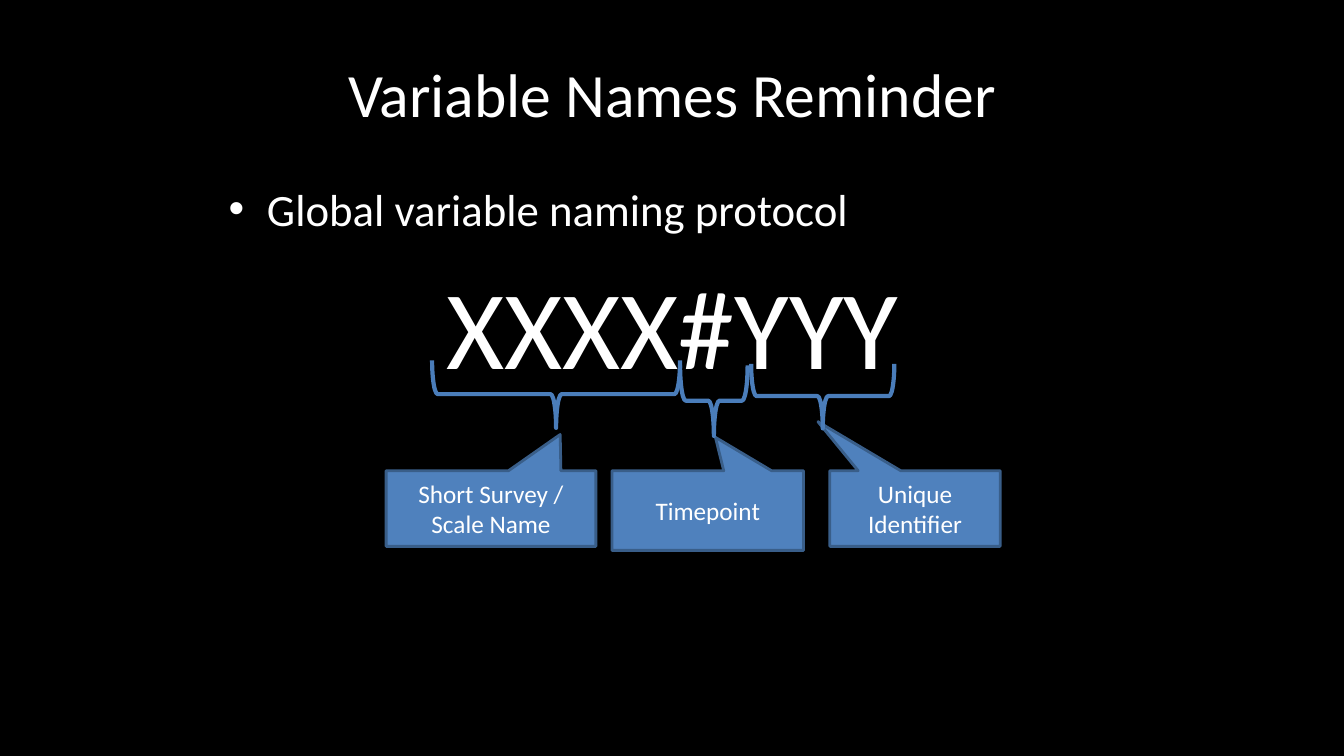
from lxml import etree
from pptx import Presentation
from pptx.dml.color import RGBColor
from pptx.enum.shapes import MSO_SHAPE as SHAPE
from pptx.enum.text import MSO_ANCHOR as ANCHOR, PP_ALIGN as ALIGN
from pptx.oxml.ns import qn
from pptx.util import Inches, Pt


def rgb(value):
    return RGBColor.from_string(value)


class Deck:
    FONT, TEXT, BACK = "Calibri", "FFFFFF", "000000"
    FILL, EDGE, BRACE = "4F81BD", "395E89", "4A7DBA"

    def __init__(self):
        self.prs = Presentation()
        self.prs.slide_width, self.prs.slide_height = Inches(13.33), Inches(7.5)
        self.s = self.prs.slides.add_slide(self.prs.slide_layouts[5])
        fill = self.s.background.fill
        fill.solid()
        fill.fore_color.rgb = rgb(self.BACK)

    def add_text(self, p, text, size, align=ALIGN.CENTER):
        p.alignment = align
        r = p.add_run()
        r.text = text
        r.font.name, r.font.size = self.FONT, Pt(size)
        r.font.color.rgb = rgb(self.TEXT)

    def indent(self, p, left, first, bullet=None):
        pPr = p._p.get_or_add_pPr()
        pPr.set("marL", str(Inches(left)))
        pPr.set("indent", str(Inches(first)))
        if bullet:
            etree.SubElement(pPr, qn("a:buFont")).set("typeface", "Arial")
            etree.SubElement(pPr, qn("a:buChar")).set("char", bullet)
        else:
            etree.SubElement(pPr, qn("a:buNone"))

    def title(self, text, box):
        sp = self.s.shapes.title
        sp.left, sp.top, sp.width, sp.height = map(Inches, box)
        tf = sp.text_frame
        tf.vertical_anchor = ANCHOR.MIDDLE
        self.add_text(tf.paragraphs[0], text, 44)

    def body(self, bullet, pattern, box):
        tf = self.s.shapes.add_textbox(*map(Inches, box)).text_frame
        tf.word_wrap = True
        p = tf.paragraphs[0]
        self.add_text(p, bullet, 32, ALIGN.LEFT)
        self.indent(p, 0.38, -0.38, "•")
        p = tf.add_paragraph()
        self.add_text(p, pattern, 80)
        p.space_before = Pt(16)
        self.indent(p, 0, -0.56)

    def shape(self, kind, box, line, width, adjust):
        sp = self.s.shapes.add_shape(kind, *map(Inches, box))
        sp.shadow.inherit = False
        sp.line.color.rgb, sp.line.width = rgb(line), Pt(width)
        for i, value in enumerate(adjust):
            sp.adjustments[i] = value
        return sp

    def callout(self, text, box, tip):
        sp = self.shape(SHAPE.RECTANGULAR_CALLOUT, box, self.EDGE, 2, tip)
        sp.fill.solid()
        sp.fill.fore_color.rgb = rgb(self.FILL)
        tf = sp.text_frame
        tf.word_wrap = True
        tf.vertical_anchor = ANCHOR.MIDDLE
        self.add_text(tf.paragraphs[0], text, 18)

    def brace(self, box):
        sp = self.shape(SHAPE.RIGHT_BRACE, box, self.BRACE, 3, (0.083, 0.5))
        sp.fill.background()
        sp.rotation = 90


def main():
    deck = Deck()

    # Title and naming pattern
    deck.title("Variable Names Reminder", (2.17, 0.3, 9, 1.25))
    deck.body("Global variable naming protocol", "XXXX#YYY", (2.17, 1.75, 9, 4.95))

    # Each part of the name: callout, its tip, and the brace above
    parts = [
        ("Short Survey / Scale Name", (3.83, 4.67, 2.08, 0.75), (0.33, -0.98),
         (5.18, 2.68, 0.67, 2.46)),
        ("Unique Identifier", (8.23, 4.67, 1.69, 0.75), (-0.57, -1.15),
         (7.84, 3.22, 0.64, 1.42)),
        ("Timepoint", (6.07, 4.67, 1.9, 0.79), (0.04, -0.92),
         (6.73, 3.64, 0.7, 0.67)),
    ]
    for text, box, tip, brace_box in parts:
        deck.callout(text, box, tip)
        deck.brace(brace_box)

    deck.prs.save("out.pptx")


if __name__ == "__main__":
    main()
